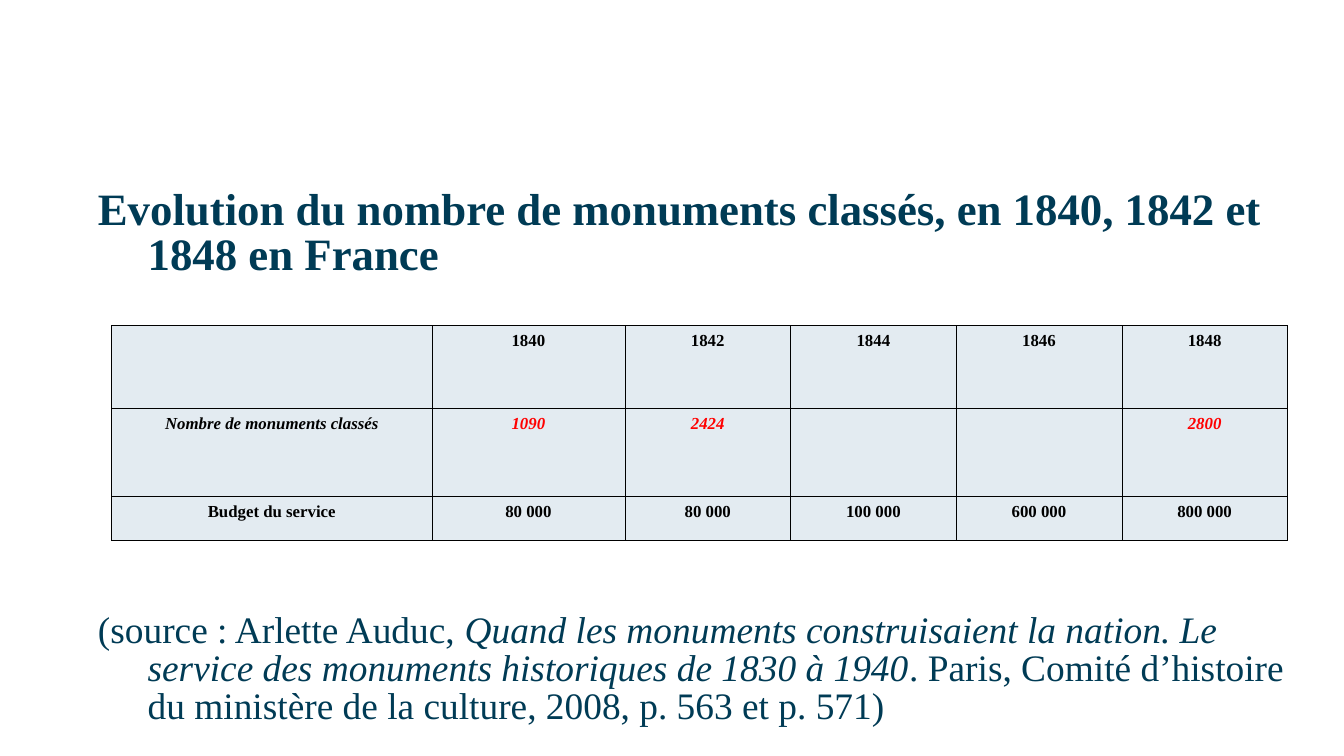
"""Build a slide with a table of listed monuments in France, 1840 to 1848."""
from lxml import etree
from pptx import Presentation
from pptx.dml.color import RGBColor
from pptx.enum.text import MSO_ANCHOR, MSO_AUTO_SIZE, PP_ALIGN
from pptx.oxml import parse_xml
from pptx.oxml.ns import nsdecls, qn
from pptx.util import Cm, Pt

NAVY, BLACK, RED, PALE = "003B55", "000000", "FF0000", "E3EBF1"


def style(r, size, color, bold=False, italic=False):
    r.font.name = "Times New Roman"
    r.font.size = Pt(size)
    r.font.bold = bold
    r.font.italic = italic
    r.font.color.rgb = RGBColor.from_string(color)


def add_borders(cell):
    for i, side in enumerate(("lnL", "lnR", "lnT", "lnB")):
        ln = parse_xml(
            f'<a:{side} {nsdecls("a")} w="{Pt(0.23)}"><a:solidFill>'
            f'<a:srgbClr val="{BLACK}"/></a:solidFill></a:{side}>')
        cell._tc.get_or_add_tcPr().insert(i, ln)


prs = Presentation()
prs.slide_width, prs.slide_height = Cm(25.4), Cm(14.29)
s = prs.slides.add_slide(prs.slide_layouts[1])
title, body = s.placeholders
title._element.getparent().remove(title._element)

body.left, body.top, body.width, body.height = Cm(1.27), Cm(3.33), Cm(23.29), Cm(10)
tf = body.text_frame
tf.word_wrap = True
tf.auto_size = MSO_AUTO_SIZE.NONE
tf.vertical_anchor = MSO_ANCHOR.TOP
tf.margin_left = tf.margin_right = tf.margin_top = tf.margin_bottom = Cm(0.25)

heading = [("Evolution du nombre de monuments classés, en 1840, 1842 et 1848 en France", False)]
source = [
    ("(source : Arlette Auduc, ", False),
    ("Quand les monuments construisaient la nation. "
     "Le service des monuments historiques de 1830 à 1940", True),
    (". Paris, Comité d’histoire du ministère de la culture, 2008, p. 563 et p. 571)", False),
]
paragraphs = [(tf.paragraphs[0], heading, 24, True, 6),
              (tf.add_paragraph(), source, 20, False, 179)]
for p, parts, size, bold, before in paragraphs:
    p.line_spacing = 0.84
    p.space_before = Pt(before)
    pPr = p._p.get_or_add_pPr()
    pPr.set("marL", str(Cm(1.27)))
    pPr.set("indent", str(-Cm(0.94)))
    etree.SubElement(pPr, qn("a:buNone"))
    for text, italic in parts:
        r = p.add_run()
        r.text = text
        style(r, size, NAVY, bold, italic)

rows = [
    ["", "1840", "1842", "1844", "1846", "1848"],
    ["Nombre de monuments classés", "1090", "2424", "", "", "2800"],
    ["Budget du service", "80 000", "80 000", "100 000", "600 000", "800 000"],
]
widths = [6.05, 3.65] + [3.13] * 4
heights = [1.57, 1.65, 0.84]
table = s.shapes.add_table(len(rows), len(widths), Cm(2.11), Cm(6.15),
                           Cm(sum(widths)), Cm(sum(heights))).table
table.first_row = table.horz_banding = False
for column, width in zip(table.columns, widths):
    column.width = Cm(width)
for row, height in zip(table.rows, heights):
    row.height = Cm(height)

for i, values in enumerate(rows):
    for j, value in enumerate(values):
        cell = table.cell(i, j)
        cell.fill.solid()
        cell.fill.fore_color.rgb = RGBColor.from_string(PALE)
        add_borders(cell)
        cell.margin_left = cell.margin_right = Cm(0.25)
        cell.margin_top, cell.margin_bottom = Cm(0.15), Cm(0.1)
        p = cell.text_frame.paragraphs[0]
        p.alignment = PP_ALIGN.CENTER
        p.line_spacing = 0.9
        if value:
            p.text = value
            style(p.runs[0], 9, RED if i == 1 and j else BLACK, True, i == 1)

prs.save("out.pptx")
